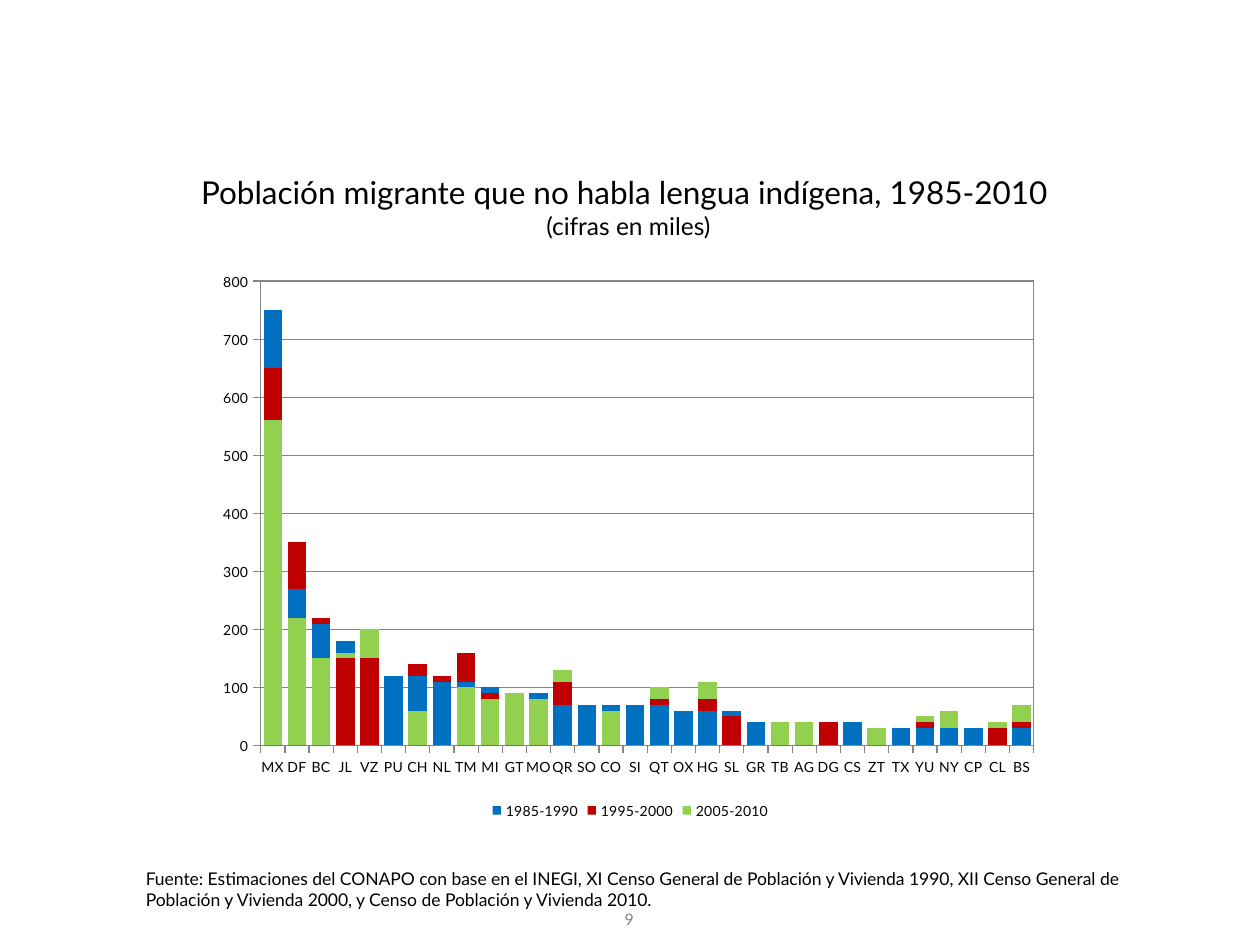
from lxml import etree
from pptx import Presentation
from pptx.chart.data import CategoryChartData
from pptx.dml.color import RGBColor
from pptx.enum.chart import XL_CHART_TYPE as ChartType, XL_LEGEND_POSITION as LegendPos
from pptx.enum.chart import XL_TICK_MARK as Tick
from pptx.enum.text import MSO_ANCHOR as Anchor, PP_ALIGN as Align
from pptx.oxml import parse_xml
from pptx.oxml.ns import nsdecls, qn
from pptx.util import Cm, Pt

FONT = "Lato"
COLORS = {"blue": "0070C0", "red": "C00000", "green": "92D050",
          "black": "000000", "gray": "808080", "grid": "868686"}

# Content
TITLE = [("Población migrante que no habla lengua indígena, 1985-2010 ", 18),
         ("(cifras en miles)", 14)]
SOURCE = ("Fuente: Estimaciones del CONAPO con base en el INEGI, XI Censo General de "
          "Población y Vivienda 1990, XII Censo General de Población y Vivienda 2000, "
          "y Censo de Población y Vivienda 2010.")
PAGE = "9"
STATES = ("MX DF BC JL VZ PU CH NL TM MI GT MO QR SO CO SI QT OX HG SL GR TB AG DG "
          "CS ZT TX YU NY CP CL BS").split()
# Stacked layers from the bottom up; states not listed are zero
SERIES = [
    ("1985-1990", "blue", dict(PU=120, NL=110, QR=70, SO=70, SI=70, QT=70, OX=60, HG=60,
                               GR=40, CS=40, TX=30, YU=30, NY=30, CP=30, BS=30)),
    ("1995-2000", "red", dict(JL=150, VZ=150, SL=50, DG=40, CL=30)),
    ("2005-2010", "green", dict(MX=560, DF=220, BC=150, CH=60, TM=100, MI=80, GT=90,
                                MO=80, CO=60, TB=40, AG=40, ZT=30)),
    ("Series 4", "blue", dict(DF=50, BC=60, CH=60, TM=10, CO=10)),
    ("Series 5", "red", dict(MX=90, NL=10, MI=10, QR=40, QT=10, HG=20, YU=10, BS=10)),
    ("Series 6", "green", dict(JL=10)),
    ("Series 7", "blue", dict(MX=100, JL=20, MI=10, MO=10, SL=10)),
    ("Series 8", "red", dict(DF=80, BC=10, CH=20, TM=50)),
    ("Series 9", "green", dict(VZ=50, QR=20, QT=20, HG=30, YU=10, NY=30, CL=10, BS=30)),
]
NAMED_SERIES = 3
PLOT = {"x": 0.06, "y": 0.03, "w": 0.92, "h": 0.83}


def rgb(name):
    return RGBColor.from_string(COLORS[name])


def style(font, size, color="black"):
    for key, value in {"name": FONT, "size": Pt(size), "bold": False}.items():
        setattr(font, key, value)
    font.color.rgb = rgb(color)


def add_text(slide, box, text, size, color="black", align=Align.LEFT):
    tf = slide.shapes.add_textbox(*map(Cm, box)).text_frame
    tf.word_wrap = True
    p = tf.paragraphs[0]
    p.alignment = align
    r = p.add_run()
    r.text = text
    style(r.font, size, color)


def add_title(slide):
    sp = slide.shapes.title
    sp.left, sp.top, sp.width, sp.height = map(Cm, (1.24, 2.51, 22.86, 3.3))
    tf = sp.text_frame
    tf.word_wrap, tf.vertical_anchor = True, Anchor.MIDDLE
    p = tf.paragraphs[0]
    p.alignment = Align.CENTER
    for i, (text, size) in enumerate(TITLE):
        if i:
            p.add_line_break()
        r = p.add_run()
        r.text = text
        style(r.font, size)


def add_chart(slide):
    data = CategoryChartData(number_format="#,##0")
    data.categories = STATES
    for name, _, values in SERIES:
        data.add_series(name, [values.get(state, 0) for state in STATES])
    box = map(Cm, (4.24, 5.33, 16.94, 11.28))
    chart = slide.shapes.add_chart(ChartType.COLUMN_STACKED, *box, data).chart
    style(chart.font, 8)
    chart.has_title = False

    # Columns
    plot = chart.plots[0]
    plot.gap_width, plot.overlap, plot.vary_by_categories = 30, 100, False
    for series, (_, color, _) in zip(plot.series, SERIES):
        series.format.fill.solid()
        series.format.fill.fore_color.rgb = rgb(color)

    # Axes
    val, cat = chart.value_axis, chart.category_axis
    for key, value in {"minimum_scale": 0, "maximum_scale": 800, "major_unit": 100,
                       "has_major_gridlines": True}.items():
        setattr(val, key, value)
    val.tick_labels.number_format = "#,##0"
    val.tick_labels.number_format_is_linked = False
    for axis in (val, cat):
        axis.major_tick_mark, axis.minor_tick_mark = Tick.OUTSIDE, Tick.NONE
        style(axis.tick_labels.font, 8)
    for line in (val.format.line, cat.format.line, val.major_gridlines.format.line):
        line.color.rgb = rgb("grid")
        line.width = Pt(0.75)

    # Legend shows only the named periods
    chart.has_legend = True
    legend = chart.legend
    legend.position, legend.include_in_layout = LegendPos.BOTTOM, False
    style(legend.font, 8)
    anchor = legend._element.find(qn("c:legendPos"))
    for i in reversed(range(NAMED_SERIES, len(SERIES))):
        anchor.addnext(parse_xml(f'<c:legendEntry {nsdecls("c")}><c:idx val="{i}"/>'
                                 '<c:delete val="1"/></c:legendEntry>'))

    # Plot area position and frame
    area = chart._chartSpace.chart.plotArea
    for old in area.findall(qn("c:layout")):
        area.remove(old)
    layout = parse_xml(f'<c:layout {nsdecls("c")}><c:manualLayout/></c:layout>')
    modes = {"layoutTarget": "inner", "xMode": "edge", "yMode": "edge"}
    for tag, value in {**modes, **PLOT}.items():
        etree.SubElement(layout[0], qn(f"c:{tag}")).set("val", str(value))
    area.insert(0, layout)
    area.append(parse_xml(
        f'<c:spPr {nsdecls("c", "a")}><a:noFill/><a:ln w="9525"><a:solidFill>'
        f'<a:srgbClr val="{COLORS["grid"]}"/></a:solidFill></a:ln></c:spPr>'))


def main():
    prs = Presentation()
    prs.slide_width, prs.slide_height = Cm(25.4), Cm(19.05)
    slide = prs.slides.add_slide(prs.slide_layouts[5])
    add_title(slide)
    add_chart(slide)
    add_text(slide, (2.69, 17.37, 20.19, 1.14), SOURCE, 10)
    add_text(slide, (11.3, 18.21, 2.77, 0.84), PAGE, 9, "gray", Align.CENTER)
    prs.save("out.pptx")


if __name__ == "__main__":
    main()
